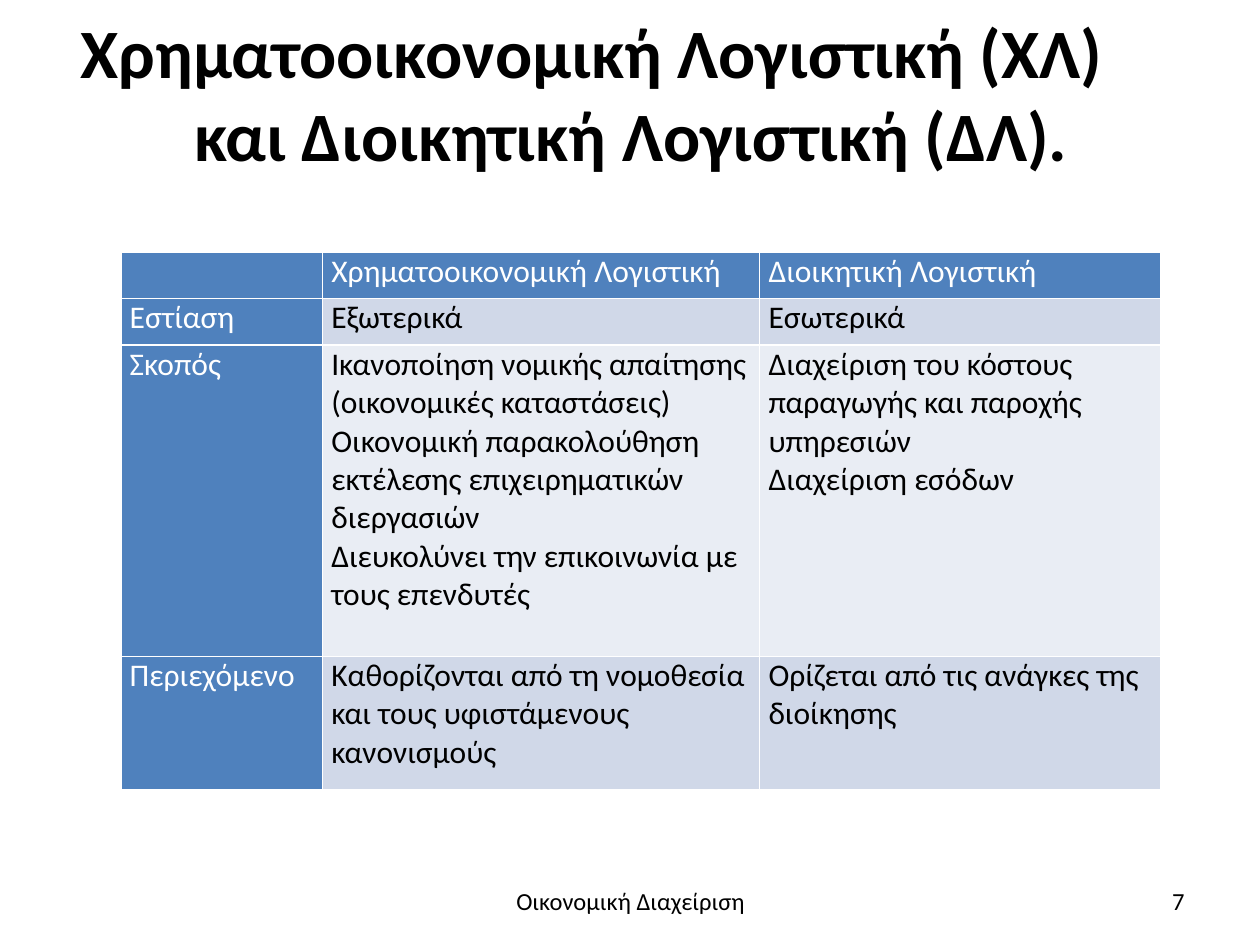
from dataclasses import dataclass

from lxml import etree
from pptx import Presentation
from pptx import util as u
from pptx.dml import color
from pptx.enum import text as t
from pptx.oxml import ns

HUES = {"ink": "000000", "paper": "FFFFFF", "head": "4F81BD",
        "dark": "D0D8E8", "light": "E9EDF4"}
COLS = [1.6, 3.47, 3.18]


@dataclass
class Row:
    high: float
    fill: str
    cells: list[str]


@dataclass
class Note:
    left: float
    wide: float
    words: str
    align: t.PP_ALIGN


ROWS = [
    Row(0.37, "head", ["", "Χρηματοοικονομική Λογιστική", "Διοικητική Λογιστική"]),
    Row(0.37, "dark", ["Εστίαση", "Εξωτερικά", "Εσωτερικά"]),
    Row(2.47, "light", [
        "Σκοπός",
        "Ικανοποίηση νομικής απαίτησης (οικονομικές καταστάσεις)\n"
        "Οικονομική παρακολούθηση εκτέλεσης επιχειρηματικών διεργασιών\n"
        "Διευκολύνει την επικοινωνία με τους επενδυτές",
        "Διαχείριση του κόστους παραγωγής και παροχής υπηρεσιών\n"
        "Διαχείριση εσόδων"]),
    Row(1.06, "dark", [
        "Περιεχόμενο",
        "Καθορίζονται από τη νομοθεσία και τους υφιστάμενους κανονισμούς",
        "Ορίζεται από τις ανάγκες της διοίκησης"]),
]

NOTES = [
    Note(3.42, 3.17, "Οικονομική Διαχείριση", t.PP_ALIGN.CENTER),
    Note(7.17, 2.33, "7", t.PP_ALIGN.RIGHT),
]


def write(frame, words: str, *, size: float, hue: str = "ink",
          bold: bool = False, align=t.PP_ALIGN.LEFT,
          anchor=t.MSO_ANCHOR.MIDDLE) -> None:
    frame.word_wrap = True
    frame.vertical_anchor = anchor
    frame.text = words
    for para in frame.paragraphs:
        para.alignment = align
        for run in para.runs:
            font = run.font
            font.name, font.size, font.bold = "Calibri", u.Pt(size), bold
            font.color.rgb = color.RGBColor.from_string(HUES[hue])


def place(shape, left: float, top: float, wide: float, high: float) -> None:
    shape.left, shape.top = u.Inches(left), u.Inches(top)
    shape.width, shape.height = u.Inches(wide), u.Inches(high)


def add_title(slide) -> None:
    title = slide.shapes.title
    place(title, 0.33, 0.4, 9.5, 1.25)
    frame = title.text_frame
    frame.auto_size = t.MSO_AUTO_SIZE.NONE
    frame.margin_bottom = u.Inches(0.64)
    write(frame, "Χρηματοοικονομική Λογιστική (ΧΛ)\nκαι Διοικητική Λογιστική (ΔΛ).",
          size=39.6, bold=True, align=t.PP_ALIGN.CENTER)
    for para, inset in zip(frame.paragraphs, (0.76, 0.14)):
        para._p.get_or_add_pPr().set("marR", str(u.Inches(inset)))


def edge(cell) -> None:
    props = cell._tc.get_or_add_tcPr()
    for side in ("lnL", "lnR", "lnT", "lnB"):
        line = etree.SubElement(props, ns.qn(f"a:{side}"), w=str(u.Pt(1)))
        fill = etree.SubElement(line, ns.qn("a:solidFill"))
        etree.SubElement(fill, ns.qn("a:srgbClr"), val=HUES["paper"])


def add_grid(slide) -> None:
    high = sum(row.high for row in ROWS)
    grid = slide.shapes.add_table(
        len(ROWS), len(COLS), u.Inches(0.96), u.Inches(2),
        u.Inches(sum(COLS)), u.Inches(high)).table
    for col, wide in zip(grid.columns, COLS):
        col.width = u.Inches(wide)
    for r, row in enumerate(ROWS):
        grid.rows[r].height = u.Inches(row.high)
        for c, words in enumerate(row.cells):
            cell = grid.cell(r, c)
            head = r == 0 or c == 0
            cell.margin_left = cell.margin_right = u.Inches(0.07)
            cell.margin_top = cell.margin_bottom = u.Inches(0)
            edge(cell)
            cell.fill.solid()
            hue = HUES["head" if head else row.fill]
            cell.fill.fore_color.rgb = color.RGBColor.from_string(hue)
            write(cell.text_frame, words, size=18,
                  hue="paper" if head else "ink", anchor=t.MSO_ANCHOR.TOP)


def add_note(slide, note: Note) -> None:
    box = slide.shapes.add_textbox(0, 0, 0, 0)
    place(box, note.left, 6.95, note.wide, 0.4)
    write(box.text_frame, note.words, size=14, align=note.align)


def main() -> None:
    deck = Presentation()
    deck.slide_width, deck.slide_height = u.Inches(10), u.Inches(7.5)
    slide = deck.slides.add_slide(deck.slide_layouts[5])
    add_title(slide)
    add_grid(slide)
    for note in NOTES:
        add_note(slide, note)
    deck.save("out.pptx")


if __name__ == "__main__":
    main()
